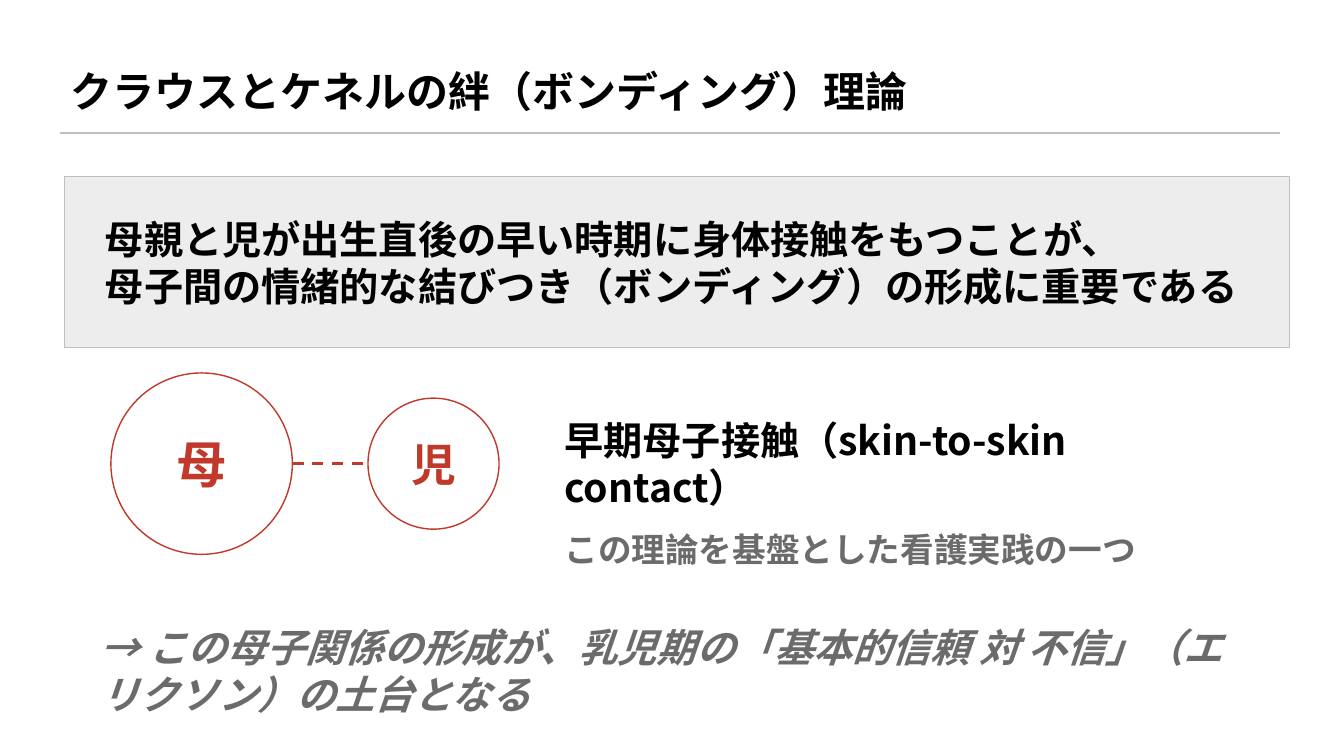
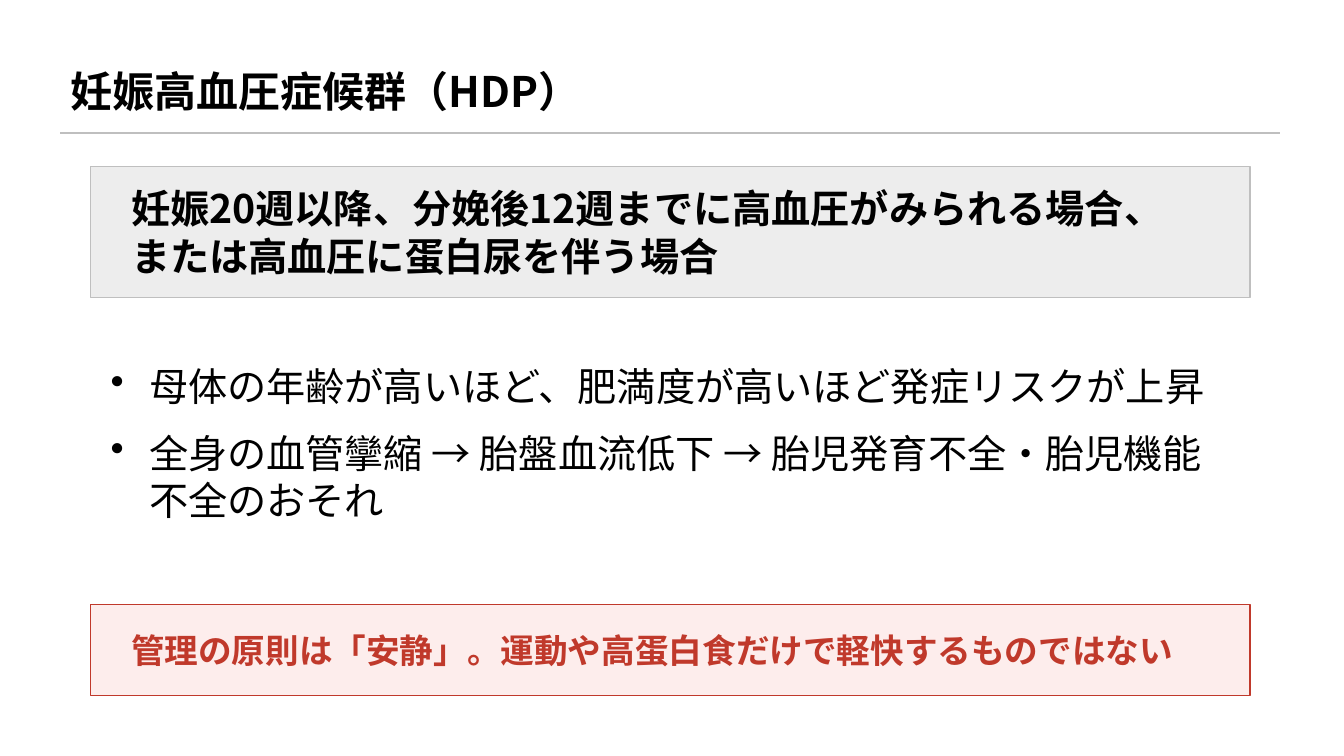
from dataclasses import dataclass

from lxml import etree
from pptx import Presentation
from pptx.dml.color import RGBColor
from pptx.enum.dml import MSO_LINE
from pptx.enum.shapes import MSO_CONNECTOR, MSO_SHAPE
from pptx.enum.text import MSO_ANCHOR, PP_ALIGN
from pptx.oxml.ns import qn
from pptx.util import Pt

RECT, OVAL = MSO_SHAPE.RECTANGLE, MSO_SHAPE.OVAL
STRAIGHT = MSO_CONNECTOR.STRAIGHT
DASH = MSO_LINE.DASH
TOP, MIDDLE = MSO_ANCHOR.TOP, MSO_ANCHOR.MIDDLE
LEFT, CENTER = PP_ALIGN.LEFT, PP_ALIGN.CENTER
EMU_PER_PX = 9144


@dataclass(frozen=True)
class Theme:
    font: str = "Noto Sans CJK JP"
    ink: str = "000000"
    muted: str = "6B6B6B"
    accent: str = "C0392B"
    rule: str = "BFBFBF"
    paper: str = "FFFFFF"
    panel: str = "EDEDED"
    alert: str = "FDEDEC"
    title: int = 30
    body: int = 28
    note: int = 24
    mother: int = 36
    child: int = 32


T = Theme()
TITLE = {"size": T.title, "color": T.ink, "bold": True}
LEAD = {"size": T.body, "color": T.ink, "bold": True}
BODY = {"size": T.body, "color": T.ink}
NOTE = {"size": T.note, "color": T.muted, "bold": True}
REMARK = {"size": T.body, "color": T.muted, "bold": True, "italic": True}
WARNING = {"size": T.note, "color": T.accent, "bold": True}
MOTHER = {"size": T.mother, "color": T.accent, "bold": True}
CHILD = {"size": T.child, "color": T.accent, "bold": True}


def px(n):
    return round(n * EMU_PER_PX)


def rgb(value):
    return RGBColor.from_string(value)


def format_run(r, fmt):
    values = {"name": T.font, **fmt, "size": Pt(fmt["size"])}
    color = values.pop("color")
    for name, value in values.items():
        setattr(r.font, name, value)
    r.font.color.rgb = rgb(color)
    ea = etree.SubElement(r.font._element, qn("a:ea"))
    ea.set("typeface", T.font)


def set_bullet(p, indent, after):
    p.space_after = Pt(after)
    pPr = p._p.get_or_add_pPr()
    pPr.set("marL", str(px(indent)))
    pPr.set("indent", str(-px(indent)))
    etree.SubElement(pPr, qn("a:buChar")).set("char", "•")


def write(sp, lines, fmt, align=LEFT, anchor=MIDDLE, margin=10, bulleted=False):
    tf = sp.text_frame
    frame = {"word_wrap": True, "vertical_anchor": anchor,
             "margin_left": px(margin), "margin_right": px(margin)}
    for name, value in frame.items():
        setattr(tf, name, value)
    for i, line in enumerate(lines):
        p = tf.paragraphs[0] if i == 0 else tf.add_paragraph()
        p.alignment = align
        if bulleted:
            set_bullet(p, 38, 14)
        r = p.add_run()
        r.text = line
        format_run(r, fmt)


def add_text(s, box, lines, fmt, **options):
    sp = s.shapes.add_textbox(*map(px, box))
    write(sp, lines, fmt, **options)


def add_figure(s, kind, box, fill, line, lines, fmt, **options):
    sp = s.shapes.add_shape(kind, *map(px, box))
    sp.shadow.inherit = False
    sp.fill.solid()
    sp.fill.fore_color.rgb = rgb(fill)
    sp.line.color.rgb = rgb(line)
    sp.line.width = Pt(1)
    write(sp, lines, fmt, **options)


def add_line(s, x, y, length, color, width, dash=None):
    cx = s.shapes.add_connector(STRAIGHT, px(x), px(y), px(x + length), px(y))
    cx.line.color.rgb = rgb(color)
    cx.line.width = Pt(width)
    if dash:
        cx.line.dash_style = dash
    etree.SubElement(cx._element.spPr, qn("a:effectLst"))


def add_panel(s, box, lines, fmt=LEAD, fill=T.panel, line=T.rule):
    add_figure(s, RECT, box, fill, line, lines, fmt, margin=40)


def add_header(s, box, title):
    x, y, w, h = box
    add_text(s, box, [title], TITLE)
    add_line(s, x, y + h - 3, w, T.rule, 1)


def add_bond(s, box):
    x, y, w, h = box
    child = 130
    circles = [("母", MOTHER, x, h), ("児", CHILD, x + w - child, child)]
    for label, fmt, left, d in circles:
        add_figure(s, OVAL, (left, y + (h - d) // 2, d, d), T.paper, T.accent,
                   [label], fmt, align=CENTER)
    add_line(s, x + h, y + h // 2, 70, T.accent, 2, DASH)


def add_practice(s, box, heading, detail):
    x, y, w, h = box
    add_text(s, (x, y, w, 90), [heading], LEAD)
    add_text(s, (x, y + h - 50, w, 50), [detail], NOTE)


def new_slide(prs, title):
    s = prs.slides.add_slide(prs.slide_layouts[6])
    add_header(s, (60, 45, 1210, 90), title)
    return s


def bonding_slide(prs):
    s = new_slide(prs, "クラウスとケネルの絆（ボンディング）理論")
    add_panel(s, (64, 175, 1215, 170), [
        "母親と児が出生直後の早い時期に身体接触をもつことが、",
        "母子間の情緒的な結びつき（ボンディング）の形成に重要である",
    ])
    add_bond(s, (110, 370, 385, 180))
    add_practice(s, (550, 415, 650, 155),
                 "早期母子接触（skin-to-skin contact）",
                 "この理論を基盤とした看護実践の一つ")
    add_text(s, (90, 635, 1150, 60), [
        "→ この母子関係の形成が、乳児期の「基本的信頼 対 不信」（エリクソン）の土台となる",
    ], REMARK)


def hypertension_slide(prs):
    s = new_slide(prs, "妊娠高血圧症候群（HDP）")
    add_panel(s, (90, 165, 1150, 130), [
        "妊娠20週以降、分娩後12週までに高血圧がみられる場合、",
        "または高血圧に蛋白尿を伴う場合",
    ])
    add_text(s, (100, 355, 1140, 210), [
        "母体の年齢が高いほど、肥満度が高いほど発症リスクが上昇",
        "全身の血管攣縮 → 胎盤血流低下 → 胎児発育不全・胎児機能不全のおそれ",
    ], BODY, anchor=TOP, bulleted=True)
    add_panel(s, (90, 600, 1150, 90), [
        "管理の原則は「安静」。運動や高蛋白食だけで軽快するものではない",
    ], WARNING, T.alert, T.accent)


def main():
    prs = Presentation()
    prs.slide_width, prs.slide_height = px(1333), px(750)
    bonding_slide(prs)
    hypertension_slide(prs)
    prs.save("out.pptx")


if __name__ == "__main__":
    main()
